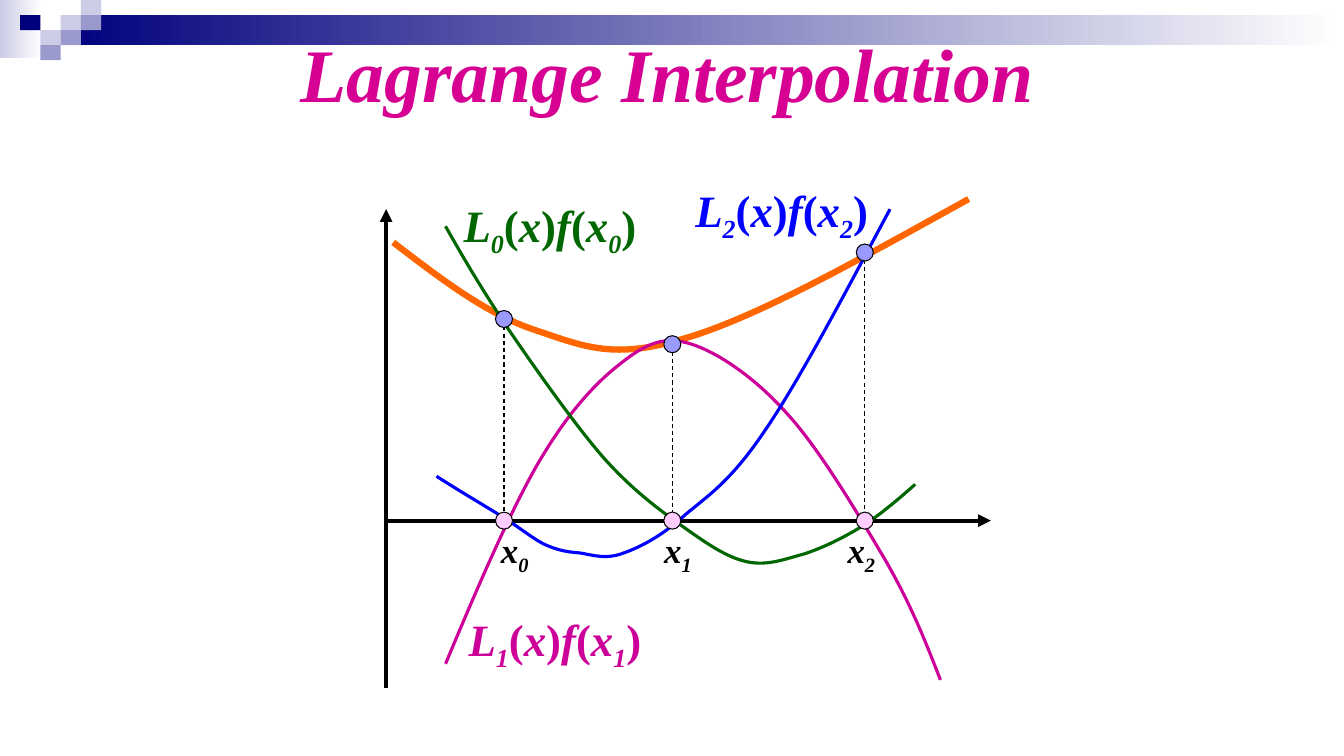
from dataclasses import dataclass

from lxml.etree import SubElement
from pptx import Presentation
from pptx.dml.color import RGBColor
from pptx.enum.dml import MSO_LINE
from pptx.enum.shapes import MSO_CONNECTOR, MSO_SHAPE as Shape
from pptx.enum.text import MSO_ANCHOR, MSO_AUTO_SIZE, PP_ALIGN
from pptx.oxml.ns import qn
from pptx.util import Cm, Pt


@dataclass(frozen=True)
class Theme:
    font: str = "Times New Roman"
    title: str = "D60093"
    navy: str = "00007D"
    mid: str = "9999CC"
    pale: str = "CCCCE6"
    white: str = "FFFFFF"
    black: str = "000000"
    interpolant: str = "FF6600"
    basis0: str = "006600"
    basis1: str = "CC0099"
    basis2: str = "0000FF"
    node: str = "FFCCFF"
    sample: str = "9999FF"
    title_size: float = 54
    basis_size: float = 32
    node_size: float = 25


THEME = Theme()
UNIT = 2.54  # centimetres per plot unit

# Bezier points in plot units from the axis crossing, y upwards:
# a start, then two control points and an end for each segment
INTERPOLANT = [
    (0.07, 2.76),
    (0.53, 2.41), (0.99, 2.05), (1.48, 1.89),
    (1.96, 1.73), (2.25, 1.59), (2.97, 1.81),
    (3.69, 2.02), (4.73, 2.61), (5.78, 3.19),
]
BASIS0 = [
    (5.25, 0.36),
    (5.07, 0.20), (4.88, 0.04), (4.70, -0.07),
    (4.52, -0.18), (4.33, -0.27), (4.15, -0.33),
    (3.96, -0.38), (3.79, -0.45), (3.59, -0.41),
    (3.39, -0.37), (3.20, -0.24), (2.96, -0.07),
    (2.72, 0.10), (2.46, 0.29), (2.17, 0.61),
    (1.88, 0.94), (1.48, 1.51), (1.22, 1.89),
    (0.96, 2.28), (0.77, 2.60), (0.59, 2.92),
]
BASIS1 = [
    (0.59, -1.42),
    (0.89, -0.70), (1.20, 0.02), (1.48, 0.52),
    (1.76, 1.01), (2.03, 1.32), (2.29, 1.53),
    (2.54, 1.73), (2.72, 1.84), (3.00, 1.76),
    (3.28, 1.68), (3.66, 1.42), (3.98, 1.06),
    (4.31, 0.70), (4.71, 0.02), (4.97, -0.42),
    (5.22, -0.86), (5.36, -1.22), (5.50, -1.58),
]
BASIS2 = [
    (0.50, 0.44),
    (0.72, 0.30), (0.94, 0.17), (1.12, 0.06),
    (1.30, -0.05), (1.43, -0.16), (1.56, -0.23),
    (1.69, -0.29), (1.78, -0.31), (1.92, -0.32),
    (2.05, -0.34), (2.18, -0.39), (2.36, -0.32),
    (2.53, -0.26), (2.74, -0.15), (2.97, 0.06),
    (3.21, 0.26), (3.43, 0.40), (3.77, 0.91),
    (4.11, 1.41), (4.55, 2.25), (5.00, 3.09),
]
# Node x, sampled value, and where its label starts
NODES = [(1.17, 2.0, 1.04), (2.84, 1.75, 2.66), (4.75, 2.66, 4.48)]


def rgb(colour):
    return RGBColor.from_string(colour)


def add_rect(page, left, top, width, height, colour, fade=False):
    rect = page.shapes.add_shape(Shape.RECTANGLE, left, top, width, height)
    rect.shadow.inherit = False
    rect.line.fill.background()
    if fade:
        rect.fill.gradient()
        rect.fill.gradient_angle = 0
        for stop, shade in zip(rect.fill.gradient_stops, (colour, THEME.white)):
            stop.color.rgb = rgb(shade)
    else:
        rect.fill.solid()
        rect.fill.fore_color.rgb = rgb(colour)


def draw_banner(page, left, top, width):
    """Fading bar with a staircase of small squares at its left end."""
    cell_w, cell_h = Cm(0.51), Cm(0.38)
    add_rect(page, left, top, Cm(1.07), Cm(1.47), THEME.pale, fade=True)
    bar_left = left + 3 * cell_w
    add_rect(page, bar_left, top + cell_h, left + width - bar_left, 2 * cell_h,
             THEME.navy, fade=True)
    cells = {
        THEME.pale: [(3, 1), (4, 0), (2, 2)],
        THEME.mid: [(4, 1), (3, 2), (2, 3)],
        THEME.navy: [(1, 1)],
    }
    for colour, places in cells.items():
        for column, row in places:
            add_rect(page, left + column * cell_w, top + row * cell_h,
                     cell_w, cell_h, colour)


def draw_title(page, text, left, top, width, height):
    title = page.shapes.title
    title.left, title.top, title.width, title.height = left, top, width, height
    title.element.getparent().append(title.element)  # above the banner
    frame = title.text_frame
    frame.text = text
    frame.auto_size = MSO_AUTO_SIZE.NONE
    frame.vertical_anchor = MSO_ANCHOR.MIDDLE
    frame.paragraphs[0].alignment = PP_ALIGN.CENTER
    style_font(frame.paragraphs[0].runs[0].font, THEME.title_size, THEME.title)


def style_font(font, size, colour):
    font.name, font.size = THEME.font, Pt(size)
    font.bold = font.italic = True
    font.color.rgb = rgb(colour)


def draw_plot(page, left, axis_y):
    """Axes, curves, nodes and labels around the axis crossing."""
    def spot(x, y):
        return left + Cm(x * UNIT), axis_y - Cm(y * UNIT)

    def line(start, end, weight, arrow=False):
        link = page.shapes.add_connector(MSO_CONNECTOR.STRAIGHT, *spot(*start), *spot(*end))
        link.line.color.rgb = rgb(THEME.black)
        link.line.width = Pt(weight)
        props = link.element.find(qn("p:spPr"))
        if arrow:
            SubElement(props.find(qn("a:ln")), qn("a:tailEnd"), type="triangle")
        else:
            link.line.dash_style = MSO_LINE.DASH
        SubElement(props, qn("a:effectLst"))

    def curve(points, colour, weight):
        start, *rest = [spot(*point) for point in points]
        builder = page.shapes.build_freeform(*start)
        builder.add_line_segments(rest, close=False)
        outline = builder.convert_to_shape()
        outline.shadow.inherit = False
        outline.fill.background()
        outline.line.color.rgb = rgb(colour)
        outline.line.width = Pt(weight)
        # Join each three straight steps into one Bezier segment
        steps = list(outline.element.iter(qn("a:lnTo")))
        for first, second, third in zip(steps[::3], steps[1::3], steps[2::3]):
            bend = SubElement(first.getparent(), qn("a:cubicBezTo"))
            for step in (first, second, third):
                bend.append(step[0])
                step.getparent().remove(step)

    def dot(x, y, colour):
        size = Cm(0.43)
        centre_x, centre_y = spot(x, y)
        mark = page.shapes.add_shape(Shape.OVAL, centre_x - size // 2,
                                     centre_y - size // 2, size, size)
        mark.shadow.inherit = False
        mark.fill.solid()
        mark.fill.fore_color.rgb = rgb(colour)
        mark.line.color.rgb = rgb(THEME.black)
        mark.line.width = Pt(0.75)

    def label(text, x, y, width, height, size, colour):
        box = page.shapes.add_textbox(*spot(x, y), Cm(width), Cm(height))
        box.text_frame.word_wrap = True
        para = box.text_frame.paragraphs[0]
        for symbol in text:
            span = para.add_run()
            span.text = symbol
            style_font(span.font, size, colour)
            span.font.italic = symbol not in "()"
        for run in box.element.iter(qn("a:r")):  # digits are subscripts
            if run.find(qn("a:t")).text.isdigit():
                run.find(qn("a:rPr")).set("baseline", "-25000")

    # Curves and axes
    curve(INTERPOLANT, THEME.interpolant, 4.5)
    line((0, 0), (6, 0), 3, arrow=True)
    line((0, -1.66), (0, 3.09), 3, arrow=True)
    for points, colour in ((BASIS1, THEME.basis1), (BASIS2, THEME.basis2),
                           (BASIS0, THEME.basis0)):
        curve(points, colour, 2.25)

    # Basis labels
    for index, x, y, colour in ((1, 0.72, -0.85, THEME.basis1),
                                (2, 2.97, 3.4, THEME.basis2),
                                (0, 0.67, 3.25, THEME.basis0)):
        label(f"L{index}(x)f(x{index})", x, y, 5.33, 1.6, THEME.basis_size, colour)

    # Nodes on the axis and the sampled values above them
    for index, (x, value, label_x) in enumerate(NODES):
        line((x, value), (x, 0), 0.75)
        dot(x, 0, THEME.node)
        dot(x, value, THEME.sample)
        label(f"x{index}", label_x, -0.03, 1.42, 1.32, THEME.node_size, THEME.black)


def main():
    deck = Presentation()
    deck.slide_width, deck.slide_height = Cm(33.87), Cm(19.05)
    page = deck.slides.add_slide(deck.slide_layouts[5])
    draw_banner(page, 0, 0, deck.slide_width)
    draw_title(page, "Lagrange Interpolation", Cm(5.92), Cm(0.64), Cm(21.79), Cm(2.34))
    draw_plot(page, Cm(9.73), Cm(13.12))
    deck.save("out.pptx")


if __name__ == "__main__":
    main()
